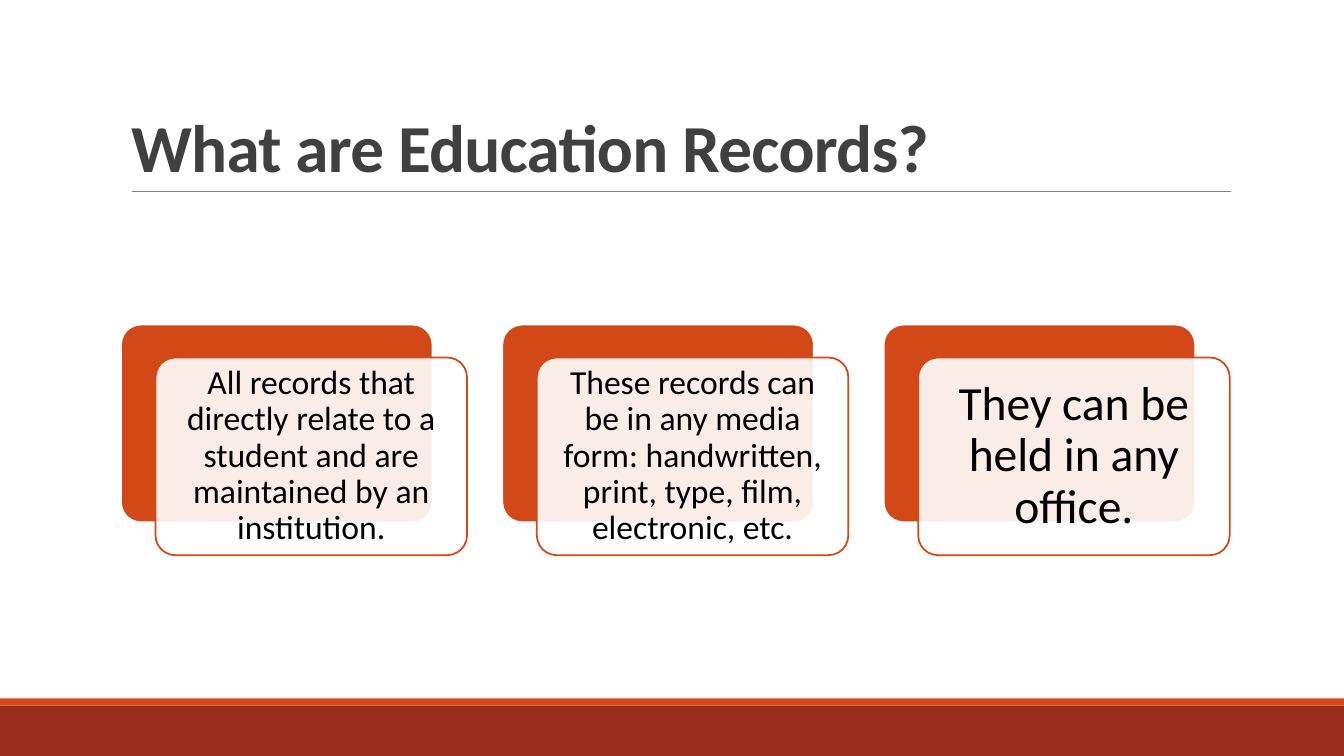
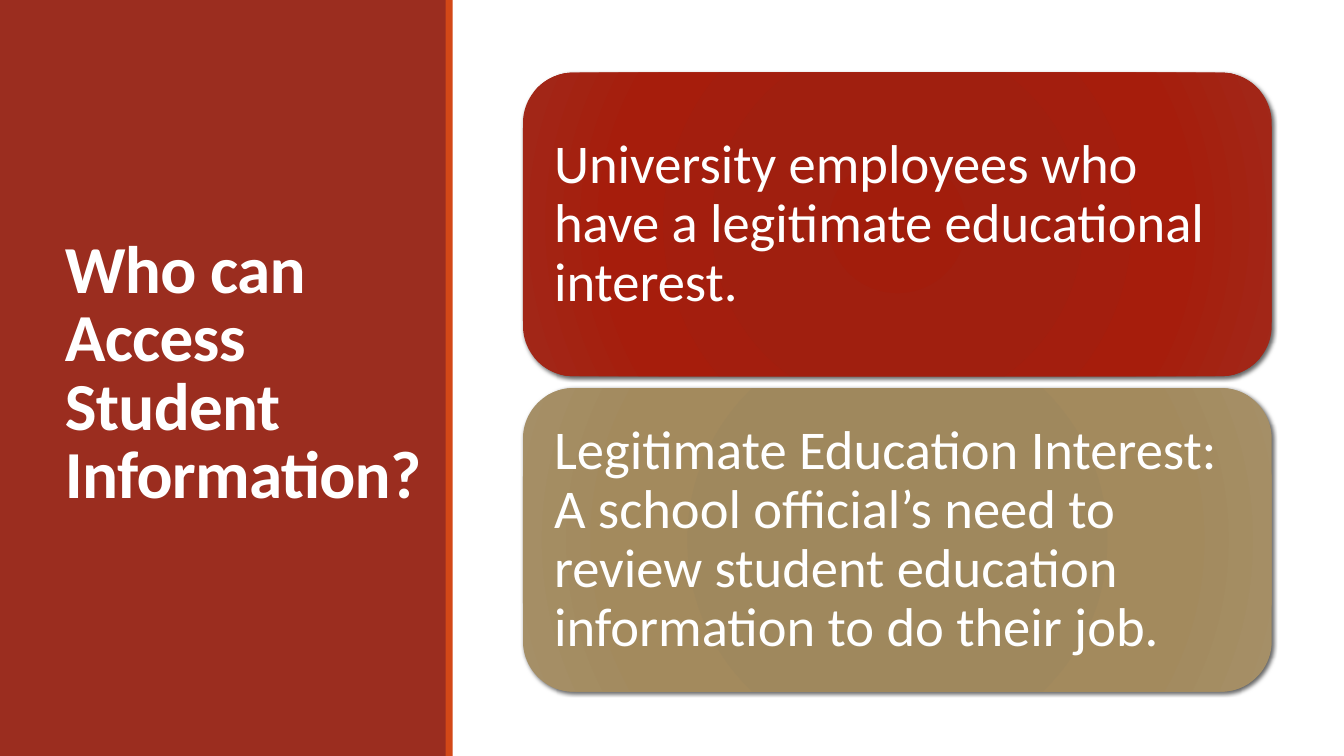
import pptx
import pptx.util
import pptx.dml.color
import pptx.enum.shapes
import pptx.enum.text
import pptx.oxml
import pptx.oxml.ns
from pptx.util import Cm, Pt

# Content
RECORDS_TITLE = "What are Education Records?"
RECORD_CARDS = [  # text, size in points, inset in cm
    ("All records that directly relate to a student and are maintained by an institution.", 24, 0.25),
    ("These records can be in any media form: handwritten, print, type, film, electronic, etc.", 24, 0.25),
    ("They can be held in any office.", 34, 0.36),
]
ACCESS_TITLE = "Who can Access Student Information?"
ACCESS_BLOCKS = [  # text, gradient name
    ("University employees who have a legitimate educational interest.", "red"),
    ("Legitimate Education Interest: A school official’s need to review student "
     "education information to do their job.", "tan"),
]

# Shared style
FONT = "Calibri"
COLORS = {"brick": "9B2D1F", "orange": "D34817", "white": "FFFFFF",
          "black": "000000", "title": "404040", "rule": "808080"}
GRADIENTS = {
    "red": [(0, "A21D0C"), (34, "A01F0F"), (70, "A61D0C"), (100, "A12819")],
    "tan": [(0, "9F875B"), (34, "9F885D"), (70, "A38A5D"), (100, "A58F67")],
}
SLIDE_W, SLIDE_H = 33.87, 19.05
SHAPE = pptx.enum.shapes.MSO_SHAPE
ANCHOR = pptx.enum.text.MSO_ANCHOR
ALIGN = pptx.enum.text.PP_ALIGN
qn = pptx.oxml.ns.qn


def rgb(name):
    return pptx.dml.color.RGBColor.from_string(COLORS[name])


def xml(tag, body):
    """Parse an element of the drawing namespace from its tag and inner XML."""
    return pptx.oxml.parse_xml(f"<a:{tag} {pptx.oxml.ns.nsdecls('a')}>{body}</a:{tag}>")


def add_box(s, box, fill, kind=SHAPE.RECTANGLE, line=None):
    sp = s.shapes.add_shape(kind, *map(Cm, box))
    sp.shadow.inherit = False
    sp.fill.solid()
    sp.fill.fore_color.rgb = rgb(fill)
    if line:
        sp.line.color.rgb = rgb(line)
        sp.line.width = Pt(1.25)
    else:
        sp.line.fill.background()
    return sp


def set_text(sp, text, size, color, inset, align):
    tf = sp.text_frame
    tf.word_wrap = True
    tf.vertical_anchor = ANCHOR.MIDDLE
    tf.margin_left = tf.margin_right = tf.margin_top = tf.margin_bottom = Cm(inset)
    p = tf.paragraphs[0]
    p.text = text
    p.alignment = align
    p.line_spacing = 0.9
    p.font.name, p.font.size, p.font.color.rgb = FONT, Pt(size), rgb(color)


def set_title(s, text, box, color, anchor):
    title = s.shapes.title
    title.left, title.top, title.width, title.height = map(Cm, box)
    title.element.getparent().append(title.element)  # in front of the bands
    tf = title.text_frame
    tf.word_wrap = True
    tf.auto_size = pptx.enum.text.MSO_AUTO_SIZE.NONE
    tf.vertical_anchor = anchor
    p = tf.paragraphs[0]
    p.alignment = ALIGN.LEFT
    p.line_spacing = 0.85
    r = p.add_run()
    r.text = text
    r.font.name, r.font.size, r.font.bold = FONT, Pt(48), True
    r.font.color.rgb = rgb(color)
    r.font._element.set("spc", "-50")


def add_bands(s, brick_box, orange_box):
    add_box(s, brick_box, "brick")
    add_box(s, orange_box, "orange")


def add_rule(s, x1, x2, y):
    rule = s.shapes.add_connector(pptx.enum.shapes.MSO_CONNECTOR.STRAIGHT,
                                  Cm(x1), Cm(y), Cm(x2), Cm(y))
    rule.line.color.rgb = rgb("rule")
    rule.line.width = Pt(0.5)
    rule.element.spPr.append(xml("effectLst", ""))


def set_gradient(sp, stops):
    body = "".join(f'<a:gs pos="{pos * 1000}"><a:srgbClr val="{color}"/></a:gs>'
                   for pos, color in stops)
    gradient = xml("gradFill", f'<a:gsLst>{body}</a:gsLst><a:path path="circle">'
                   '<a:fillToRect l="100000" t="100000" r="100000" b="100000"/></a:path>')
    spPr = sp.element.spPr
    spPr.replace(spPr.find(qn("a:solidFill")), gradient)


def set_shadow(sp):
    shadow = xml("outerShdw", '<a:srgbClr val="000000"><a:alpha val="60000"/></a:srgbClr>')
    for key, value in (("blurRad", Pt(3)), ("dist", Pt(2)), ("dir", 45 * 60000)):
        shadow.set(key, str(int(value)))
    sp.element.spPr.find(qn("a:effectLst")).append(shadow)


def build_records(s):
    add_bands(s, (0, 17.78, SLIDE_W, 1.27), (0, 17.6, SLIDE_W, 0.18))
    add_rule(s, 3.33, 31.01, 4.83)
    set_title(s, RECORDS_TITLE, (3.05, 0.79, 27.94, 4.04), "title", ANCHOR.BOTTOM)

    # Cards, each in front of an offset orange plate
    left, top, w, h, step = 3.05, 8.18, 7.85, 4.98, 9.61
    dx, dy = 0.87, 0.83
    for i, (text, size, inset) in enumerate(RECORD_CARDS):
        x = left + i * step
        plate = add_box(s, (x, top, w, h), "orange", SHAPE.ROUNDED_RECTANGLE, "white")
        card = add_box(s, (x + dx, top + dy, w, h), "white", SHAPE.ROUNDED_RECTANGLE, "orange")
        plate.adjustments[0] = card.adjustments[0] = 0.1
        fill = card.element.spPr.find(qn("a:solidFill"))
        fill[0].append(xml("alpha", ""))
        fill[0][0].set("val", "90000")
        set_text(card, text, size, "black", inset, ALIGN.CENTER)


def build_access(s):
    add_bands(s, (0, 0, 11.25, SLIDE_H), (11.23, 0, 0.18, SLIDE_H))
    set_title(s, ACCESS_TITLE, (1.38, 1.45, 9.85, 16.03), "white", ANCHOR.MIDDLE)

    # Stacked blocks
    left, top, w, h, step = 13.18, 1.83, 18.87, 7.65, 7.95
    for i, (text, gradient) in enumerate(ACCESS_BLOCKS):
        block = add_box(s, (left, top + i * step, w, h), "brick", SHAPE.ROUNDED_RECTANGLE)
        set_gradient(block, GRADIENTS[gradient])
        set_shadow(block)
        set_text(block, text, 39, "white", 0.41, ALIGN.LEFT)


def main():
    prs = pptx.Presentation()
    prs.slide_width, prs.slide_height = Cm(SLIDE_W), Cm(SLIDE_H)
    for build in (build_records, build_access):
        build(prs.slides.add_slide(prs.slide_layouts[5]))
    prs.save("out.pptx")


if __name__ == "__main__":
    main()
